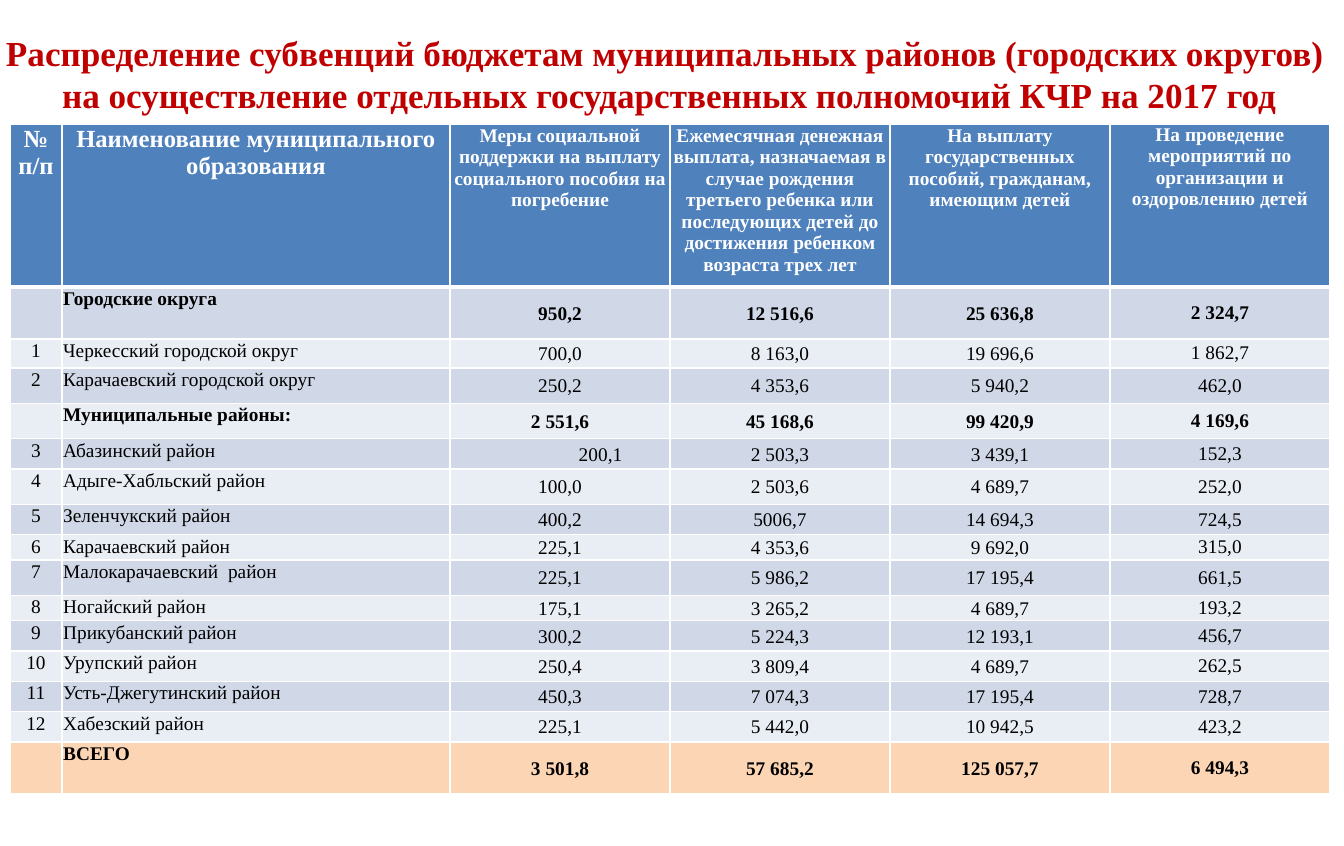
from itertools import count

from lxml.etree import SubElement
from pptx import Presentation
from pptx.dml.color import RGBColor
from pptx.enum.text import MSO_ANCHOR, MSO_AUTO_SIZE, PP_ALIGN
from pptx.oxml.ns import qn
from pptx.util import Inches, Pt

RED = RGBColor(0xC0, 0x00, 0x00)
BLUE = RGBColor(0x4F, 0x81, 0xBD)
DARK_BAND = RGBColor(0xD0, 0xD8, 0xE8)
LIGHT_BAND = RGBColor(0xE9, 0xED, 0xF4)
PEACH = RGBColor(0xFC, 0xD5, 0xB5)
WHITE = RGBColor(0xFF, 0xFF, 0xFF)
BLACK = RGBColor(0x00, 0x00, 0x00)

GRID_COLUMNS, GRID_ROWS = 1063, 669
COLUMN_SPANS = [41, 307] + [174] * 4
HEADER_SPAN = 129

TITLE = [
    "Распределение субвенций бюджетам муниципальных районов (городских округов) ",
    "на осуществление отдельных государственных полномочий КЧР на 2017 год",
]
HEADINGS = [
    "№ п/п",
    "Наименование муниципального образования",
    "Меры социальной поддержки на выплату социального пособия на погребение",
    "Ежемесячная денежная выплата, назначаемая в случае рождения третьего ребенка "
    "или последующих детей до достижения ребенком возраста трех лет",
    "На выплату государственных пособий, гражданам, имеющим детей",
    "На проведение мероприятий по организации и оздоровлению детей",
]
TOTAL = "ВСЕГО"
SUMMARIES = {"Городские округа", "Муниципальные районы:", TOTAL}
INDENTED = "Абазинский район"
SUBSIDIES = [
    (41, "Городские округа", "950,2", "12 516,6", "25 636,8", "2 324,7"),
    (23, "Черкесский городской округ", "700,0", "8 163,0", "19 696,6", "1 862,7"),
    (28, "Карачаевский городской округ", "250,2", "4 353,6", "5 940,2", "462,0"),
    (28, "Муниципальные районы:", "2 551,6", "45 168,6", "99 420,9", "4 169,6"),
    (24, "Абазинский район", "200,1", "2 503,3", "3 439,1", "152,3"),
    (28, "Адыге-Хабльский район", "100,0", "2 503,6", "4 689,7", "252,0"),
    (24, "Зеленчукский район", "400,2", "5006,7", "14 694,3", "724,5"),
    (20, "Карачаевский район", "225,1", "4 353,6", "9 692,0", "315,0"),
    (28, "Малокарачаевский  район", "225,1", "5 986,2", "17 195,4", "661,5"),
    (20, "Ногайский район", "175,1", "3 265,2", "4 689,7", "193,2"),
    (24, "Прикубанский район", "300,2", "5 224,3", "12 193,1", "456,7"),
    (24, "Урупский район", "250,4", "3 809,4", "4 689,7", "262,5"),
    (24, "Усть-Джегутинский район", "450,3", "7 074,3", "17 195,4", "728,7"),
    (24, "Хабезский район", "225,1", "5 442,0", "10 942,5", "423,2"),
    (41, TOTAL, "3 501,8", "57 685,2", "125 057,7", "6 494,3"),
]


class SlideBuilder:
    font_name = "Times New Roman"

    def __init__(self, presentation):
        self.column = presentation.slide_width / GRID_COLUMNS
        self.row = presentation.slide_height / GRID_ROWS
        self.slide = presentation.slides.add_slide(presentation.slide_layouts[5])

    def across(self, columns):
        return round(columns * self.column)

    def down(self, rows):
        return round(rows * self.row)

    def place(self, left, top, width, height):
        return self.across(left), self.down(top), self.across(width), self.down(height)

    def format(self, paragraph, size, color, bold, align=PP_ALIGN.CENTER):
        paragraph.alignment = align
        font = paragraph.font
        font.name, font.size, font.bold = self.font_name, Pt(size), bold
        font.color.rgb = color

    def title(self, lines, *area):
        heading = self.slide.shapes.title
        heading.left, heading.top, heading.width, heading.height = self.place(*area)
        frame = heading.text_frame
        frame.text = "\n".join(lines)
        frame.word_wrap = False
        frame.auto_size = MSO_AUTO_SIZE.NONE
        frame.vertical_anchor = MSO_ANCHOR.TOP
        for paragraph in frame.paragraphs:
            self.format(paragraph, 20, RED, True)

    def table(self, row_spans, left, top):
        area = self.place(left, top, sum(COLUMN_SPANS), sum(row_spans))
        table = self.slide.shapes.add_table(
            len(row_spans), len(COLUMN_SPANS), *area).table
        table.horz_banding = False
        for column, span in zip(table.columns, COLUMN_SPANS):
            column.width = self.across(span)
        for row, span in zip(table.rows, row_spans):
            row.height = self.down(span)
        return table

    def borders(self, cell, bottom):
        properties = cell._tc.get_or_add_tcPr()
        for side, width in (("L", 1), ("R", 1), ("T", 1), ("B", bottom)):
            line = SubElement(properties, qn(f"a:ln{side}"), w=str(Pt(width)))
            fill = SubElement(line, qn("a:solidFill"))
            SubElement(fill, qn("a:srgbClr"), val=str(WHITE))

    def cell(self, cell, text, fill, size=11, color=BLACK, bold=False,
             align=PP_ALIGN.CENTER, anchor=MSO_ANCHOR.TOP, bottom=1, inset=0.01):
        cell.margin_left = cell.margin_right = cell.margin_top = Inches(inset)
        cell.margin_bottom = 0
        cell.vertical_anchor = anchor
        self.borders(cell, bottom)
        cell.fill.solid()
        cell.fill.fore_color.rgb = fill
        cell.text = text
        self.format(cell.text_frame.paragraphs[0], size, color, bold, align)

    def indent(self, cell, columns):
        properties = cell.text_frame.paragraphs[0]._p.get_or_add_pPr()
        properties.set("marL", "0")
        properties.set("indent", str(self.across(columns)))


def main():
    presentation = Presentation()
    presentation.slide_width, presentation.slide_height = Inches(10.63), Inches(6.69)
    builder = SlideBuilder(presentation)

    table = builder.table([HEADER_SPAN] + [entry[0] for entry in SUBSIDIES], 8, 98)
    last = len(HEADINGS) - 1
    for position, heading in enumerate(HEADINGS):
        builder.cell(table.cell(0, position), heading, BLUE,
                     size=14 if position < 2 else 11, color=WHITE, bold=True,
                     bottom=3, inset=0 if position == last else 0.01)

    numbers = count(1)
    for index, (_, district, *amounts) in enumerate(SUBSIDIES, start=1):
        summary = district in SUMMARIES
        band = PEACH if district == TOTAL else DARK_BAND if index % 2 else LIGHT_BAND
        number = "" if summary else str(next(numbers))
        builder.cell(table.cell(index, 0), number, band)
        builder.cell(table.cell(index, 1), district, band, bold=summary,
                     align=PP_ALIGN.LEFT)
        for position, amount in enumerate(amounts, start=2):
            builder.cell(table.cell(index, position), amount, band, bold=summary,
                         anchor=MSO_ANCHOR.MIDDLE, inset=0 if position == last else 0.01)
        if district == INDENTED:
            builder.indent(table.cell(index, 2), 64)

    builder.title(TITLE, -9, 20, 1077, 77)
    presentation.save("out.pptx")


if __name__ == "__main__":
    main()
